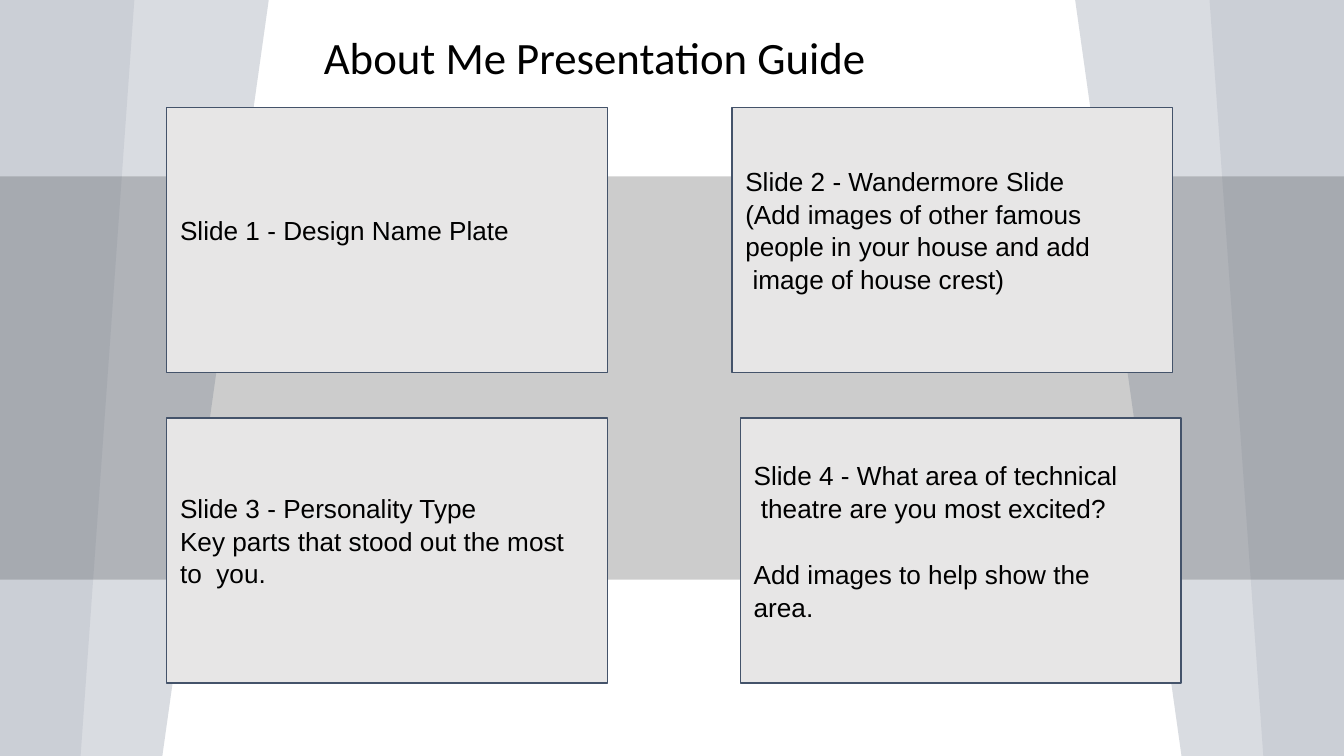
from lxml.etree import SubElement
from pptx import Presentation
from pptx.dml.color import RGBColor
from pptx.enum.shapes import MSO_SHAPE
from pptx.enum.text import MSO_ANCHOR, PP_ALIGN
from pptx.oxml.ns import qn
from pptx.util import Pt

WIDTH, HEIGHT = 720, 405
SLATE, BLACK, CARD_GRAY = "44536A", "000000", "E7E6E6"


def color(value):
    return RGBColor.from_string(value)


def add_panel(slide, points, fill, opacity):
    """Draw a borderless, translucent polygon; opacity is in percent."""
    builder = slide.shapes.build_freeform(Pt(points[0][0]), Pt(points[0][1]))
    builder.add_line_segments([(Pt(x), Pt(y)) for x, y in points[1:]], close=True)
    panel = builder.convert_to_shape()
    panel.shadow.inherit = False
    panel.line.fill.background()
    panel.fill.solid()
    panel.fill.fore_color.rgb = color(fill)
    tint = panel.fill._xPr.find(qn("a:solidFill"))[0]
    SubElement(tint, qn("a:alpha"), val=str(opacity * 1000))


def add_backdrop(slide, width, height):
    # Horizontal band
    top, bottom = 94.5, 310.5
    add_panel(slide, [(0, top), (width, top), (width, bottom), (0, bottom)], BLACK, 20)

    # Slanted side panels, mirrored left and right
    for mirrored in (False, True):
        for top_reach, bottom_reach, opacity in ((144, 87, 20), (72, 43.2, 9)):
            corners = [(0, 0), (top_reach, 0), (bottom_reach, height), (0, height)]
            if mirrored:
                corners = [(width - x, y) for x, y in corners]
            add_panel(slide, corners, SLATE, opacity)


def write_paragraphs(frame, paragraphs, font, size, inset, spacing=1.0, gap=0):
    """Write paragraphs, each a list of lines; gap is the space before the later ones."""
    frame.word_wrap = True
    frame.vertical_anchor = MSO_ANCHOR.TOP
    frame.margin_left, frame.margin_top = Pt(inset[0]), Pt(inset[1])
    frame.margin_right = frame.margin_bottom = 0
    for number, lines in enumerate(paragraphs):
        paragraph = frame.add_paragraph() if number else frame.paragraphs[0]
        paragraph.alignment = PP_ALIGN.LEFT
        paragraph.line_spacing = spacing
        paragraph.space_before = Pt(gap if number else 0)
        for line_number, line in enumerate(lines):
            if line_number:
                paragraph.add_line_break()
            run = paragraph.add_run()
            run.text = line
            run.font.name = font
            run.font.size = Pt(size)
            run.font.color.rgb = color(BLACK)


def add_title(slide, left, top, width, height):
    title = slide.shapes.add_textbox(Pt(left), Pt(top), Pt(width), Pt(height))
    write_paragraphs(title.text_frame, [["About Me Presentation Guide"]],
                     "Calibri", 24, (0.7, 1.7))


def add_card(slide, left, top, width, height, text_top, paragraphs, gap):
    card = slide.shapes.add_shape(MSO_SHAPE.RECTANGLE, Pt(left), Pt(top),
                                  Pt(width), Pt(height))
    card.shadow.inherit = False
    card.fill.solid()
    card.fill.fore_color.rgb = color(CARD_GRAY)
    card.line.color.rgb = color(SLATE)
    card.line.width = Pt(0.72)
    write_paragraphs(card.text_frame, paragraphs, "Arial", 14, (7.2, text_top),
                     spacing=1.04, gap=gap)


def add_guide_cards(slide, width, height):
    left, upper, lower = 89.4, 57.6, 224
    # left, top, text inset, paragraphs, gap between paragraphs
    cards = [
        (left, upper, 56.8, [["Slide 1 - Design Name Plate"]], 0),
        (392.2, upper, 30.3, [["Slide 2 - Wandermore Slide",
                               "(Add images of other famous",
                               "people in your house and add",
                               " image of house crest)"]], 0),
        (left, lower, 39.2, [["Slide 3 - Personality Type"],
                             ["Key parts that stood out the most",
                              "to  you."]], 0),
        (396.7, lower, 21.7, [["Slide 4 - What area of technical",
                               " theatre are you most excited?"],
                              ["Add images to help show the",
                               "area."]], 17.8),
    ]
    for x, y, text_top, paragraphs, gap in cards:
        add_card(slide, x, y, width, height, text_top, paragraphs, gap)


def main():
    deck = Presentation()
    deck.slide_width, deck.slide_height = Pt(WIDTH), Pt(HEIGHT)
    slide = deck.slides.add_slide(deck.slide_layouts[6])
    add_backdrop(slide, WIDTH, HEIGHT)
    add_title(slide, 172.8, 14.4, 293, 31)
    add_guide_cards(slide, 236, 142)
    deck.save("out.pptx")


if __name__ == "__main__":
    main()
